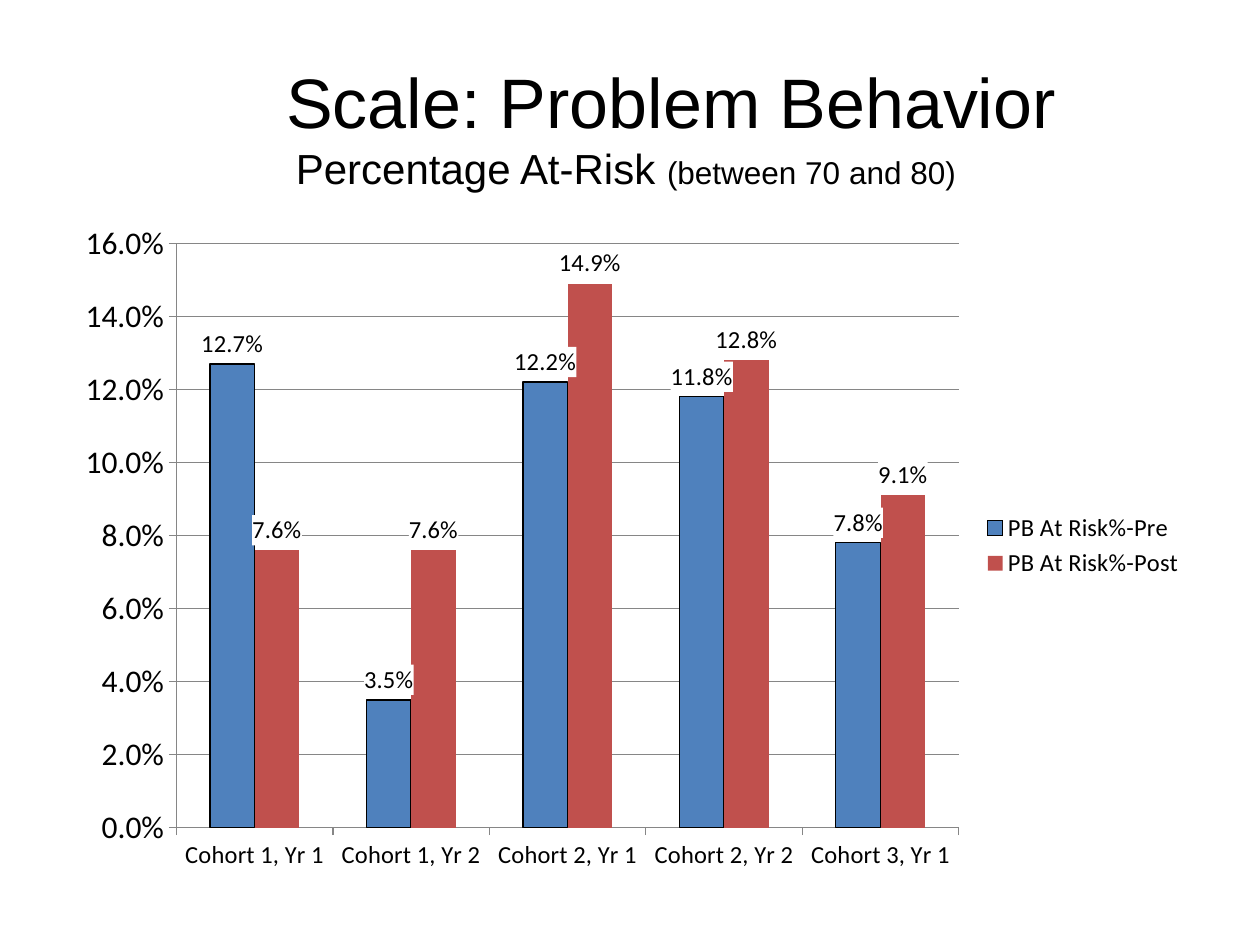
import pptx
import pptx.chart.data
import pptx.dml.color
import pptx.enum.chart
import pptx.enum.text
import pptx.oxml
import pptx.oxml.ns
import pptx.util

COLORS = {"text": "000000", "pre": "4F81BD", "post": "C0504D",
          "axis": "868686", "label": "FFFFFF"}
NS = pptx.oxml.ns.nsdecls("a", "c")


def rgb(name):
    return pptx.dml.color.RGBColor.from_string(COLORS[name])


def set_font(font, name, size):
    font.name = name
    font.size = pptx.util.Pt(size)
    font.bold = False
    font.color.rgb = rgb("text")


prs = pptx.Presentation()
prs.slide_width = pptx.util.Inches(10)
prs.slide_height = pptx.util.Inches(7.5)
W, H = prs.slide_width, prs.slide_height
s = prs.slides.add_slide(prs.slide_layouts[5])

# Title and subtitle
title = s.shapes.title
title.left, title.top = int(W * 0.217), int(H * 0.055)
title.width, title.height = int(W * 0.65), int(H * 0.103)
subtitle = s.shapes.add_textbox(int(W * 0.225), int(H * 0.144),
                                int(W * 0.55), int(H * 0.067))
headings = [
    (title, [("Scale: Problem Behavior", 40)]),
    (subtitle, [("Percentage At-Risk ", 24), ("(between 70 and 80)", 18)]),
]
for sp, runs in headings:
    tf = sp.text_frame
    tf.word_wrap = False
    tf.auto_size = pptx.enum.text.MSO_AUTO_SIZE.SHAPE_TO_FIT_TEXT
    tf.vertical_anchor = pptx.enum.text.MSO_ANCHOR.TOP
    p = tf.paragraphs[0]
    p.alignment = pptx.enum.text.PP_ALIGN.LEFT
    for text, size in runs:
        r = p.add_run()
        r.text = text
        set_font(r.font, "Arial", size)

# Chart data
data = pptx.chart.data.CategoryChartData(number_format="0.0%")
data.categories = ["Cohort 1, Yr 1", "Cohort 1, Yr 2", "Cohort 2, Yr 1",
                   "Cohort 2, Yr 2", "Cohort 3, Yr 1"]
data.add_series("PB At Risk%-Pre", [0.127, 0.035, 0.122, 0.118, 0.078])
data.add_series("PB At Risk%-Post", [0.076, 0.076, 0.149, 0.128, 0.091])
chart = s.shapes.add_chart(
    pptx.enum.chart.XL_CHART_TYPE.COLUMN_CLUSTERED,
    int(W * 0.05), int(H * 0.222), int(W * 0.9), int(H * 0.711), data).chart
chart.has_title = False
set_font(chart.font, "Calibri", 18)

# Legend
chart.has_legend = True
chart.legend.position = pptx.enum.chart.XL_LEGEND_POSITION.RIGHT
chart.legend.include_in_layout = False
set_font(chart.legend.font, "Calibri", 14)

# Axes
cat, val = chart.category_axis, chart.value_axis
for axis, size in ((cat, 14), (val, 18)):
    set_font(axis.tick_labels.font, "Calibri", size)
    axis.major_tick_mark = pptx.enum.chart.XL_TICK_MARK.OUTSIDE
    axis.format.line.color.rgb = rgb("axis")
val.minimum_scale, val.maximum_scale, val.major_unit = 0, 0.16, 0.02
val.tick_labels.number_format = "0.0%"
val.tick_labels.number_format_is_linked = False
val.major_gridlines.format.line.color.rgb = rgb("axis")

# Columns and their labels on a white ground
plot = chart.plots[0]
plot.gap_width, plot.overlap = 150, 0
plot.vary_by_categories = False
for series, color in zip(plot.series, ("pre", "post")):
    series.format.fill.solid()
    series.format.fill.fore_color.rgb = rgb(color)
    labels = series.data_labels
    labels.show_value = True
    labels.number_format = "0.0%"
    labels.number_format_is_linked = False
    labels.position = pptx.enum.chart.XL_LABEL_POSITION.OUTSIDE_END
    set_font(labels.font, "Calibri", 14)
    # The ground comes before the text properties in the schema
    ground = pptx.oxml.parse_xml(
        f'<c:spPr {NS}><a:solidFill><a:srgbClr val="{COLORS["label"]}"/>'
        '</a:solidFill><a:ln><a:noFill/></a:ln></c:spPr>')
    series._element.find(".//" + pptx.oxml.ns.qn("c:txPr")).addprevious(ground)
outline = plot.series[0].format.line
outline.color.rgb = rgb("text")
outline.width = pptx.util.Pt(0.75)

# Plot area as shares of the chart
area = chart._chartSpace.chart.plotArea
for old in area.findall(pptx.oxml.ns.qn("c:layout")):
    area.remove(old)
shares = "".join(f'<c:{tag} val="{share}"/>' for tag, share in
                 (("x", 0.1), ("y", 0.05), ("w", 0.69), ("h", 0.87)))
area.insert(0, pptx.oxml.parse_xml(
    f'<c:layout {NS}><c:manualLayout><c:layoutTarget val="inner"/>'
    f'<c:xMode val="edge"/><c:yMode val="edge"/>{shares}'
    '</c:manualLayout></c:layout>'))

prs.save("out.pptx")
